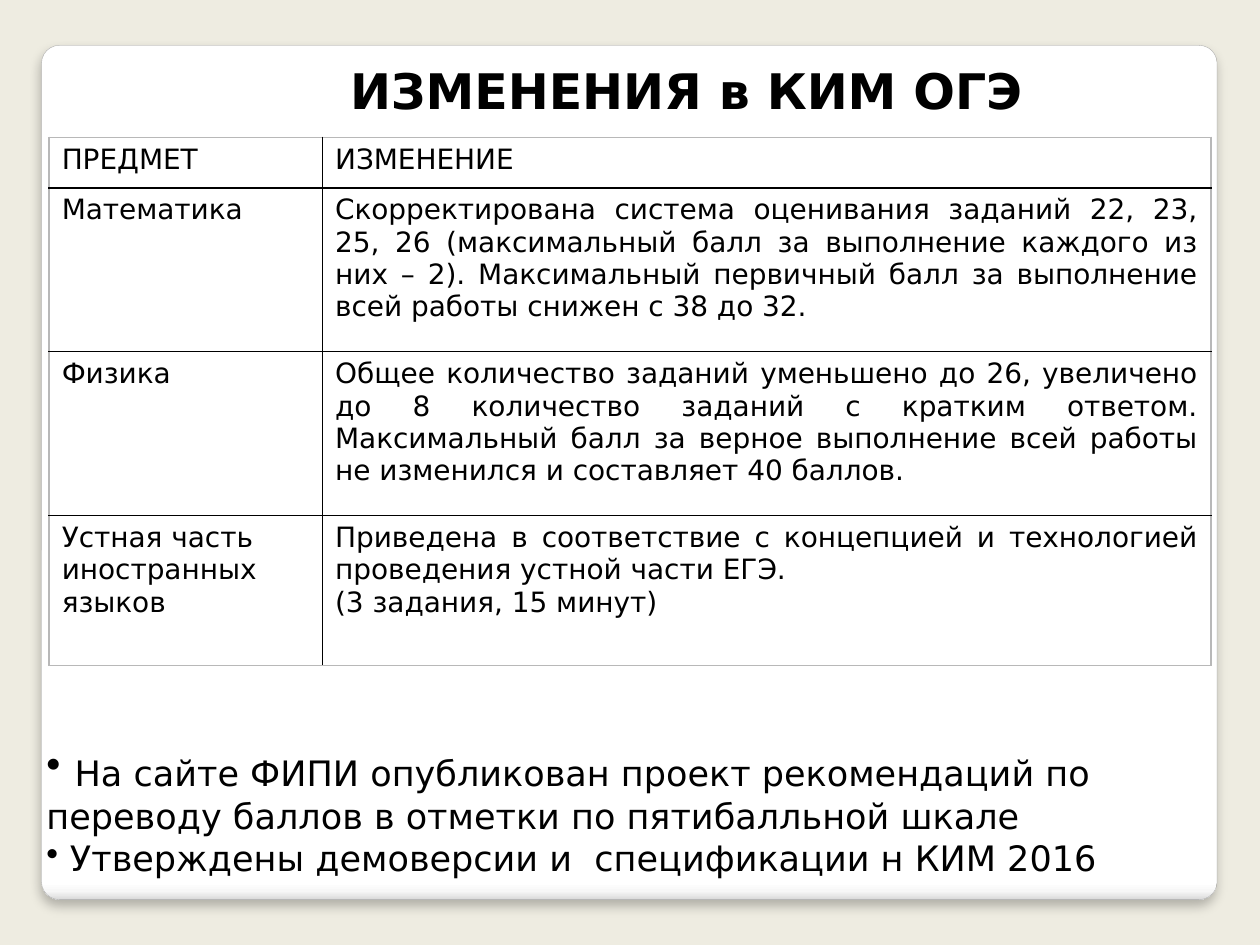
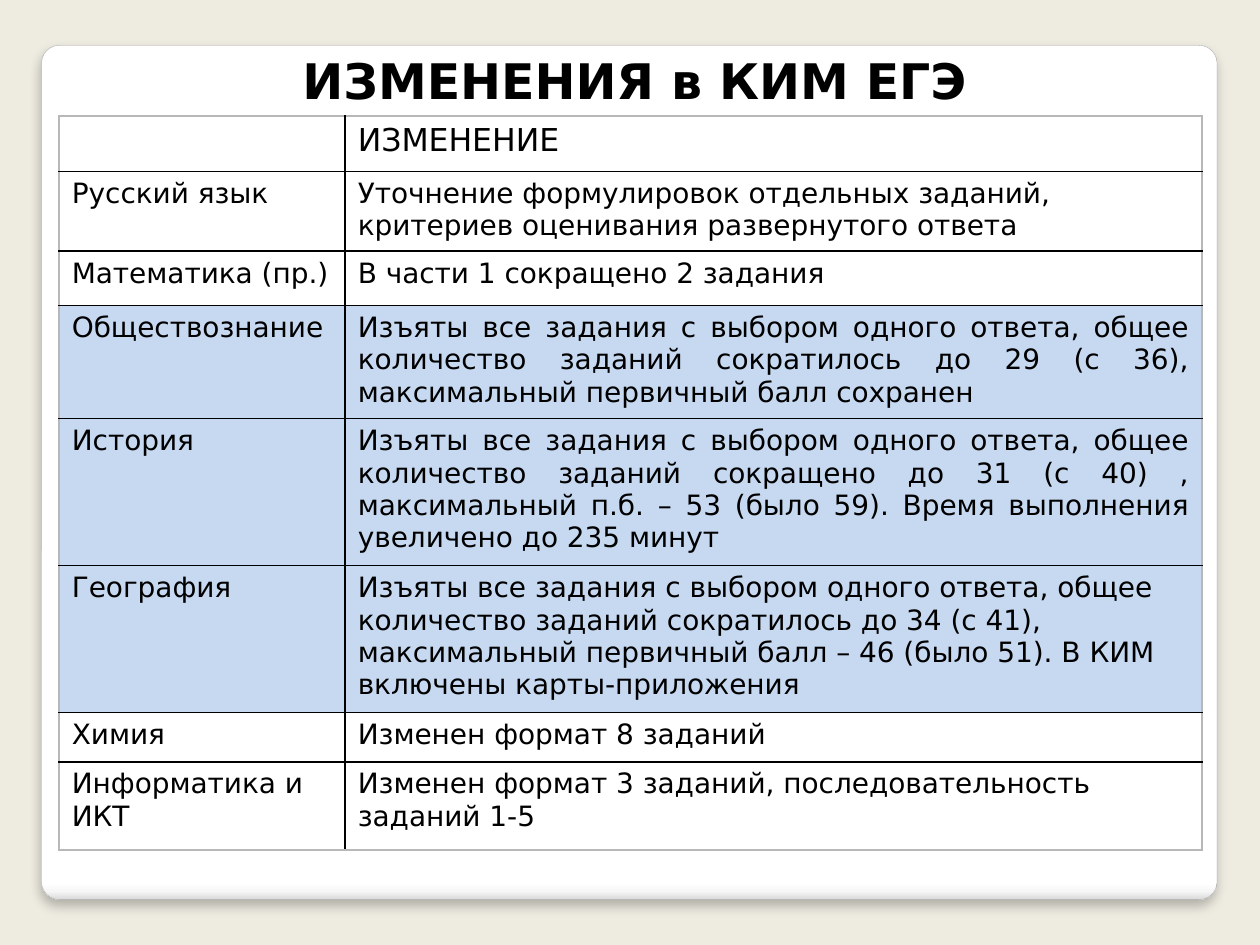
from lxml.etree import SubElement
from pptx import Presentation
from pptx.dml.color import RGBColor
from pptx.enum.shapes import MSO_SHAPE
from pptx.enum.text import MSO_ANCHOR, PP_ALIGN
from pptx.oxml import parse_xml
from pptx.oxml.ns import nsdecls, qn
from pptx.util import Inches, Pt

FONT = "DejaVu Sans"
BACKGROUND = RGBColor(0xEE, 0xEC, 0xE1)
CARD_EDGE = RGBColor(0xA4, 0xA4, 0xA4)
TABLE_EDGE = RGBColor(0xB8, 0xB8, 0xB8)
BLACK = RGBColor(0x00, 0x00, 0x00)
HIGHLIGHT = RGBColor(0xC6, 0xD9, 0xF1)
CARD_STOPS = [(0, "FFFFFF"), (98, "FFFFFF"), (99, "F7F7F7"), (100, "DADADA")]
CARD_BOX = (0.33, 0.36, 9.33, 6.78)

LEFT, JUSTIFY = PP_ALIGN.LEFT, PP_ALIGN.JUSTIFY

# Each row: height, subject, paragraphs of the change, alignment, highlighted
OGE_ROWS = [
    (0.4, "ПРЕДМЕТ", ["ИЗМЕНЕНИЕ"], LEFT, False),
    (1.3, "Математика",
     ["Скорректирована система оценивания заданий 22, 23, 25, 26 (максимальный балл "
      "за выполнение каждого из них – 2). Максимальный первичный балл за выполнение "
      "всей работы снижен с 38 до 32."], JUSTIFY, False),
    (1.3, "Физика",
     ["Общее количество заданий уменьшено до 26, увеличено до 8 количество заданий "
      "с кратким ответом. Максимальный балл за верное выполнение всей работы "
      "не изменился и составляет 40 баллов."], JUSTIFY, False),
    (1.19, "Устная часть иностранных языков",
     ["Приведена в соответствие с концепцией и технологией проведения устной части ЕГЭ.",
      "(3 задания, 15 минут)"], JUSTIFY, False),
]
EGE_ROWS = [
    (0.44, "", ["ИЗМЕНЕНИЕ"], LEFT, False),
    (0.62, "Русский язык",
     ["Уточнение формулировок отдельных заданий, критериев оценивания "
      "развернутого ответа"], LEFT, False),
    (0.43, "Математика (пр.)", ["В части 1 сокращено 2 задания"], LEFT, False),
    (0.87, "Обществознание",
     ["Изъяты все задания с выбором одного ответа, общее количество заданий "
      "сократилось до 29 (с 36), максимальный первичный балл сохранен"], JUSTIFY, True),
    (1.13, "История",
     ["Изъяты все задания с выбором одного ответа, общее количество заданий "
      "сокращено до 31 (с 40) , максимальный п.б. – 53 (было 59). "
      "Время выполнения увеличено до 235 минут"], JUSTIFY, True),
    (1.13, "География",
     ["Изъяты все задания с выбором одного ответа, общее количество заданий "
      "сократилось до 34 (с 41), максимальный первичный балл – 46 (было 51). "
      "В КИМ включены карты-приложения"], LEFT, True),
    (0.39, "Химия", ["Изменен формат 8 заданий"], LEFT, False),
    (0.7, "Информатика и ИКТ",
     ["Изменен формат 3 заданий, последовательность заданий 1-5"], LEFT, False),
]
# Each bullet is a list of (text, size) runs
NOTES = [
    [(" ", 24), ("На сайте ФИПИ опубликован проект рекомендаций по переводу "
                 "баллов в отметки по пятибалльной шкале", 20)],
    [(" Утверждены демоверсии и  спецификации н КИМ 2016", 20)],
]


def inches(box):
    return [Inches(value) for value in box]


def add_run(paragraph, text, size, bold=False):
    run = paragraph.add_run()
    run.text = text
    run.font.name = FONT
    run.font.size = Pt(size)
    run.font.bold = bold
    run.font.color.rgb = BLACK


def add_card(slide):
    """Rounded white panel with a shaded lower edge and a soft shadow."""
    card = slide.shapes.add_shape(MSO_SHAPE.ROUNDED_RECTANGLE, *inches(CARD_BOX))
    card.adjustments[0] = 0.021
    card.line.color.rgb = CARD_EDGE
    card.line.width = Pt(0.16)
    stops = "".join(f'<a:gs pos="{pos * 1000}"><a:srgbClr val="{color}"/></a:gs>'
                    for pos, color in CARD_STOPS)
    properties = card.element.spPr
    properties.find(qn("a:prstGeom")).addnext(parse_xml(
        f'<a:gradFill {nsdecls("a")}><a:gsLst>{stops}</a:gsLst>'
        '<a:lin ang="5400000" scaled="0"/></a:gradFill>'))
    properties.append(parse_xml(
        f'<a:effectLst {nsdecls("a")}><a:outerShdw blurRad="{Pt(6)}" dist="{Pt(4)}" '
        'dir="5400000" algn="t" rotWithShape="0"><a:srgbClr val="000000">'
        '<a:alpha val="25000"/></a:srgbClr></a:outerShdw></a:effectLst>'))


def add_text_frame(slide, box, anchor):
    frame = slide.shapes.add_textbox(*inches(box)).text_frame
    frame.word_wrap = True
    frame.vertical_anchor = anchor
    return frame


def add_title(slide, box, text):
    paragraph = add_text_frame(slide, box, MSO_ANCHOR.MIDDLE).paragraphs[0]
    paragraph.alignment = PP_ALIGN.CENTER
    add_run(paragraph, text, 28, bold=True)


def set_borders(cell, edges):
    """Draw 1 pt borders; edges maps each side to its colour."""
    properties = cell._tc.get_or_add_tcPr()
    for index, (side, color) in enumerate(edges.items()):
        properties.insert(index, parse_xml(
            f'<a:{side} {nsdecls("a")} w="{Pt(1)}"><a:solidFill>'
            f'<a:srgbClr val="{color}"/></a:solidFill></a:{side}>'))


def fill_cell(cell, texts, size, alignment, highlighted):
    if highlighted:
        cell.fill.solid()
        cell.fill.fore_color.rgb = HIGHLIGHT
    else:
        cell.fill.background()
    frame = cell.text_frame
    for index, text in enumerate(texts):
        paragraph = frame.add_paragraph() if index else frame.paragraphs[0]
        paragraph.alignment = alignment
        if text:
            add_run(paragraph, text, size)


def add_changes_table(slide, left, top, widths, rows, header_size):
    height = sum(row[0] for row in rows)
    table = slide.shapes.add_table(
        len(rows), len(widths), *inches((left, top, sum(widths), height))).table
    table.first_row = table.horz_banding = False
    for column, width in zip(table.columns, widths):
        column.width = Inches(width)
    last_row, last_column = len(rows) - 1, len(widths) - 1
    for r, (row_height, subject, changes, alignment, highlighted) in enumerate(rows):
        table.rows[r].height = Inches(row_height)
        size = 16 if r else header_size
        fill_cell(table.cell(r, 0), [subject], size, LEFT, highlighted)
        fill_cell(table.cell(r, 1), changes, size, alignment, highlighted)
        for c in range(len(widths)):
            set_borders(table.cell(r, c), {
                "lnL": BLACK if c else TABLE_EDGE,
                "lnR": BLACK if c < last_column else TABLE_EDGE,
                "lnT": BLACK if r else TABLE_EDGE,
                "lnB": BLACK if r < last_row else TABLE_EDGE,
            })


def add_notes_list(slide, box):
    frame = add_text_frame(slide, box, MSO_ANCHOR.TOP)
    for index, runs in enumerate(NOTES):
        paragraph = frame.add_paragraph() if index else frame.paragraphs[0]
        bullet = SubElement(paragraph._p.get_or_add_pPr(), qn("a:buChar"))
        bullet.set("char", "•")
        for text, size in runs:
            add_run(paragraph, text, size)


def add_base_slide(presentation):
    slide = presentation.slides.add_slide(presentation.slide_layouts[6])
    slide.background.fill.solid()
    slide.background.fill.fore_color.rgb = BACKGROUND
    add_card(slide)
    return slide


def build_oge_slide(presentation):
    slide = add_base_slide(presentation)
    add_title(slide, (1.14, 0.28, 8.61, 0.87), "ИЗМЕНЕНИЯ в КИМ ОГЭ")
    add_changes_table(slide, 0.39, 1.09, (2.17, 7.05), OGE_ROWS, 16)
    add_notes_list(slide, (0.27, 5.86, 9.45, 1.2))


def build_ege_slide(presentation):
    slide = add_base_slide(presentation)
    add_title(slide, (0.5, 0.28, 9.07, 0.71), "ИЗМЕНЕНИЯ в КИМ ЕГЭ")
    add_changes_table(slide, 0.47, 0.92, (2.27, 6.8), EGE_ROWS, 18)


def main():
    presentation = Presentation()
    presentation.slide_width = Inches(10)
    presentation.slide_height = Inches(7.5)
    build_oge_slide(presentation)
    build_ege_slide(presentation)
    presentation.save("out.pptx")


if __name__ == "__main__":
    main()
